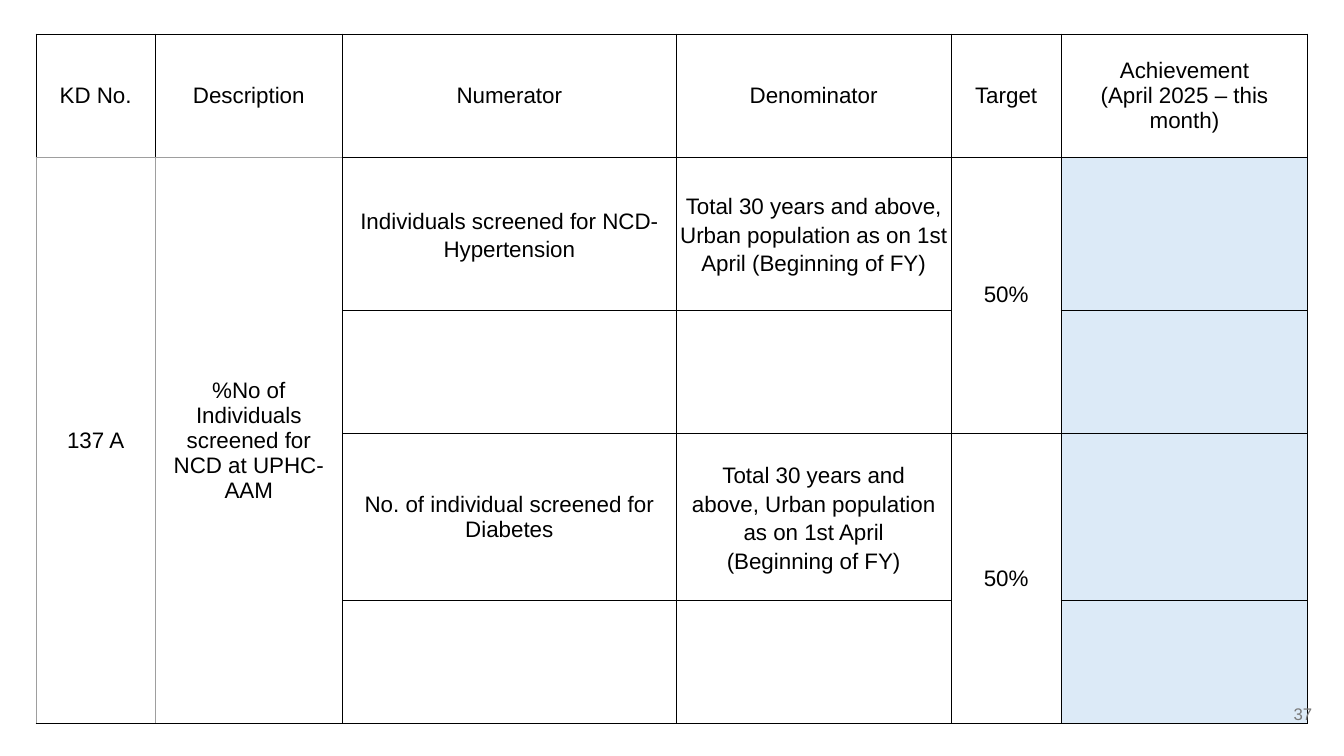
from dataclasses import dataclass

from lxml.etree import SubElement
from pptx import Presentation
from pptx.dml.color import RGBColor
from pptx.enum.text import MSO_ANCHOR, PP_ALIGN
from pptx.oxml.ns import qn
from pptx.table import Table, _Cell
from pptx.util import Cm, Pt

COLORS = {
    "black": "000000",
    "grey": "9E9E9E",
    "number": "797979",
    "white": "FFFFFF",
    "blue": "DCEAF7",
}
COLUMN_WIDTHS = (3.0, 4.72, 8.41, 6.93, 2.77, 6.22)
ROW_HEIGHTS = (3.1, 3.86, 3.1, 4.22, 3.1)
LAST_ROW = len(ROW_HEIGHTS) - 1
ACHIEVEMENT_COLUMN = len(COLUMN_WIDTHS) - 1
SIDES = ("left", "right", "top", "bottom")
WIDE_INSETS = (0.33, 0.33, 0.33, 0.33)
TIGHT_INSETS = (0.1, 0.1, 0.08, 0.08)
POPULATION = "Total 30 years and above, Urban population as on 1st April (Beginning of FY)"


@dataclass(frozen=True)
class Entry:
    row: int
    column: int
    lines: tuple[str, ...]
    rows: int = 1
    spacing: float = 1.0
    insets: tuple[float, ...] = WIDE_INSETS


HEADINGS = (
    ("KD No.",),
    ("Description",),
    ("Numerator",),
    ("Denominator",),
    ("Target",),
    ("Achievement", "(April 2025 – this month)"),
)
ENTRIES = [Entry(0, column, lines) for column, lines in enumerate(HEADINGS)] + [
    Entry(1, 0, ("137 A",), rows=4),
    Entry(1, 1, ("%No of Individuals screened for NCD at UPHC-AAM",), rows=4),
    Entry(1, 2, ("Individuals screened for NCD- Hypertension",), spacing=1.15, insets=TIGHT_INSETS),
    Entry(1, 3, (POPULATION,), spacing=1.15, insets=TIGHT_INSETS),
    Entry(1, 4, ("50%",), rows=2),
    Entry(3, 2, ("No. of individual screened for Diabetes",)),
    Entry(3, 3, (POPULATION,), spacing=1.15),
    Entry(3, 4, ("50%",), rows=2),
]


def write_paragraph(para, text: str, size: float, color: str, align, spacing: float = 1.0) -> None:
    para.alignment = align
    para.line_spacing = spacing
    span = para.add_run()
    span.text = text
    for name, value in {"name": "Arial", "size": Pt(size), "bold": False}.items():
        setattr(span.font, name, value)
    span.font.color.rgb = RGBColor.from_string(COLORS[color])


def set_insets(target, insets: tuple[float, ...]) -> None:
    for side, inset in zip(SIDES, insets):
        setattr(target, f"margin_{side}", Cm(inset))


def border_colors(row: int, column: int) -> dict[str, str]:
    """Black grid, with grey lines around the two merged columns on the left."""
    colors = dict.fromkeys(SIDES, "black")
    if column < 2:
        if row == 0:
            colors["bottom"] = "grey"
        else:
            colors["left"] = "grey"
            colors["right"] = "grey" if column == 0 else "black"
            colors["top"] = "grey"
    return colors


def draw_borders(cell: _Cell, colors: dict[str, str]) -> None:
    properties = cell._tc.get_or_add_tcPr()
    for side, color in colors.items():
        line = SubElement(properties, qn(f"a:ln{side[0].upper()}"), w=str(Pt(0.75)))
        fill = SubElement(line, qn("a:solidFill"))
        SubElement(fill, qn("a:srgbClr"), val=COLORS[color])


def style_grid(table: Table) -> None:
    inner_tops = {(row, entry.column) for entry in ENTRIES
                  for row in range(entry.row + 1, entry.row + entry.rows)}
    for row in range(len(ROW_HEIGHTS)):
        for column in range(len(COLUMN_WIDTHS)):
            cell = table.cell(row, column)
            colors = border_colors(row, column)
            # Lines inside a merged area are left out
            if (row, column) in inner_tops:
                del colors["top"]
            if (row + 1, column) in inner_tops and row < LAST_ROW:
                # The merge origin carries the outer bottom line
                colors["bottom"] = "black"
            draw_borders(cell, colors)
            shaded = row > 0 and column == ACHIEVEMENT_COLUMN
            cell.fill.solid()
            cell.fill.fore_color.rgb = RGBColor.from_string(COLORS["blue" if shaded else "white"])


def fill_entry(table: Table, entry: Entry) -> None:
    cell = table.cell(entry.row, entry.column)
    if entry.rows > 1:
        cell.merge(table.cell(entry.row + entry.rows - 1, entry.column))
    cell.vertical_anchor = MSO_ANCHOR.MIDDLE
    set_insets(cell, entry.insets)
    for index, line in enumerate(entry.lines):
        para = cell.text_frame.paragraphs[0] if index == 0 else cell.text_frame.add_paragraph()
        write_paragraph(para, line, 16, "black", PP_ALIGN.CENTER, entry.spacing)


def add_indicator_table(page) -> None:
    table = page.shapes.add_table(
        len(ROW_HEIGHTS), len(COLUMN_WIDTHS),
        Cm(0.91), Cm(0.86), Cm(sum(COLUMN_WIDTHS)), Cm(sum(ROW_HEIGHTS)),
    ).table
    table.first_row = False
    table.horz_banding = False
    for column, width in zip(table.columns, COLUMN_WIDTHS):
        column.width = Cm(width)
    for row, height in zip(table.rows, ROW_HEIGHTS):
        row.height = Cm(height)
    style_grid(table)
    for entry in ENTRIES:
        fill_entry(table, entry)


def add_page_number(page) -> None:
    box = page.shapes.add_textbox(Cm(31.37), Cm(17.27), Cm(2.03), Cm(1.45))
    frame = box.text_frame
    frame.word_wrap = True
    frame.vertical_anchor = MSO_ANCHOR.MIDDLE
    set_insets(frame, WIDE_INSETS)
    write_paragraph(frame.paragraphs[0], "37", 12, "number", PP_ALIGN.RIGHT)


def main() -> None:
    deck = Presentation()
    deck.slide_width, deck.slide_height = Cm(33.87), Cm(19.05)
    page = deck.slides.add_slide(deck.slide_layouts[6])
    add_indicator_table(page)
    add_page_number(page)
    deck.save("out.pptx")


if __name__ == "__main__":
    main()
